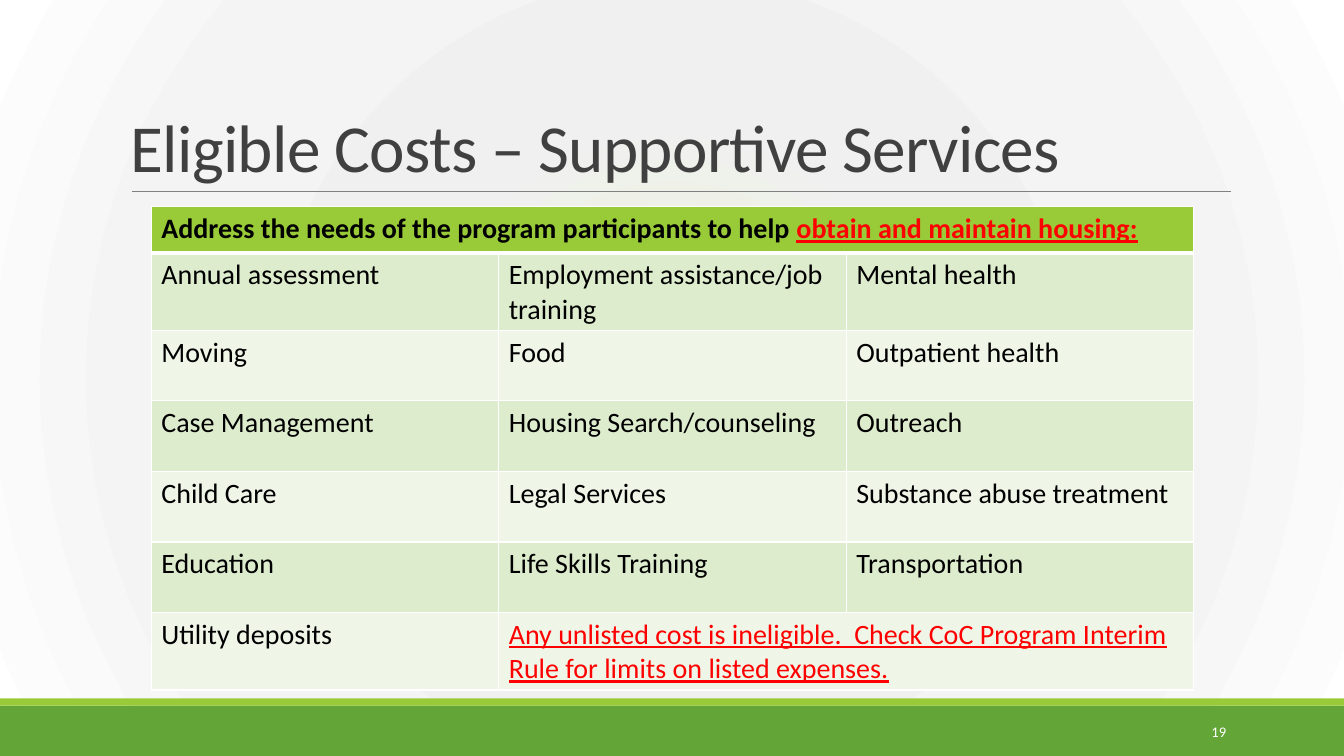
from dataclasses import dataclass

from lxml import etree
from pptx import Presentation
from pptx.dml.color import RGBColor
from pptx.enum.shapes import MSO_CONNECTOR as Line, MSO_SHAPE as Shape
from pptx.enum.text import MSO_ANCHOR as Anchor, PP_ALIGN as Align
from pptx.oxml import parse_xml
from pptx.oxml.ns import nsdecls, qn
from pptx.util import Inches, Pt


@dataclass(frozen=True)
class Theme:
    font: str = "Calibri"
    title_size: float = 48
    body_size: float = 20
    number_size: float = 10.5
    title: str = "404040"
    text: str = "000000"
    alert: str = "FF0000"
    light: str = "FFFFFF"
    rule: str = "808080"
    green: str = "63A537"
    lime: str = "99CB38"
    bands: tuple = ("DEECCE", "EFF6E8")
    backdrop: tuple = ((0, "EBF5D7"), (34, "F0F0F0"), (70, "F4F4F4"), (100, "FFFFFF"))


THEME = Theme()
WIDTH, HEIGHT = 13.33, 7.5
TITLE = "Eligible Costs – Supportive Services"
HEADING = "Address the needs of the program participants to help "
HEADING_ALERT = "obtain and maintain housing:"
SERVICES = [
    ("Annual assessment", "Employment assistance/job training", "Mental health"),
    ("Moving", "Food", "Outpatient health"),
    ("Case Management", "Housing Search/counseling", "Outreach"),
    ("Child Care", "Legal Services", "Substance abuse treatment"),
    ("Education", "Life Skills Training", "Transportation"),
]
LAST_SERVICE = "Utility deposits"
LIMITS = ("Any unlisted cost is ineligible.  Check CoC Program Interim Rule "
          "for limits on listed expenses.")
COLUMNS = 3
HEADER_ROW, FIRST_ROW, ROW = 0.46, 0.74, 0.7


def add_span(para, text, size, color, bold=False, underline=False):
    span = para.add_run()
    span.text = text
    font = span.font
    font.name, font.size, font.bold, font.underline = THEME.font, Pt(size), bold, underline
    font.color.rgb = RGBColor.from_string(color)
    return span


def add_text(page, box, anchor):
    """Add a wrapping text box and return its first paragraph."""
    frame = page.shapes.add_textbox(*map(Inches, box)).text_frame
    frame.word_wrap = True
    frame.vertical_anchor = anchor
    return frame.paragraphs[0]


def add_backdrop(page):
    stops = "".join(f'<a:gs pos="{share * 1000}"><a:srgbClr val="{color}"/></a:gs>'
                    for share, color in THEME.backdrop)
    background = parse_xml(
        f'<p:bg {nsdecls("p", "a")}><p:bgPr><a:gradFill rotWithShape="1">'
        f'<a:gsLst>{stops}</a:gsLst><a:path path="circle">'
        '<a:fillToRect l="100000" t="100000" r="100000" b="100000"/></a:path>'
        '</a:gradFill><a:effectLst/></p:bgPr></p:bg>')
    page.element.find(qn("p:cSld")).insert(0, background)


def add_footer(page, box, number):
    """Fill the box with a band that has a thin stripe above it and a page number."""
    left, top, width, height = box
    stripe = 0.07
    for y, tall, color in ((top, height, THEME.green), (top - stripe, stripe, THEME.lime)):
        band = page.shapes.add_shape(Shape.RECTANGLE, *map(Inches, (left, y, width, tall)))
        band.shadow.inherit = False
        band.fill.solid()
        band.fill.fore_color.rgb = RGBColor.from_string(color)
        band.line.fill.background()
    para = add_text(page, (left + 10.83, top + 0.06, 1.43, 0.4), Anchor.MIDDLE)
    para.alignment = Align.RIGHT
    add_span(para, number, THEME.number_size, THEME.light)


def add_title(page, box):
    left, top, width, height = box
    para = add_text(page, box, Anchor.BOTTOM)
    para.line_spacing = 0.85
    span = add_span(para, TITLE, THEME.title_size, THEME.title)
    span.font._element.set("spc", "-50")
    ends = (left + 0.11, top + height, left + width + 0.01, top + height)
    rule = page.shapes.add_connector(Line.STRAIGHT, *map(Inches, ends))
    rule.line.color.rgb = RGBColor.from_string(THEME.rule)
    rule.line.width = Pt(0.5)
    etree.SubElement(rule._element.spPr, qn("a:effectLst"))


def style_cell(cell, fill, bottom=1):
    """Give the cell a fill and white borders; bottom is that border's width."""
    cell.fill.solid()
    cell.fill.fore_color.rgb = RGBColor.from_string(fill)
    properties = cell._tc.get_or_add_tcPr()
    for place, (side, points) in enumerate(zip("LRTB", (1, 1, 1, bottom))):
        properties.insert(place, parse_xml(
            f'<a:ln{side} {nsdecls("a")} w="{Pt(points)}"><a:solidFill>'
            f'<a:srgbClr val="{THEME.light}"/></a:solidFill></a:ln{side}>'))


def add_services(page, box):
    row_count = len(SERVICES) + 2
    frame = page.shapes.add_table(row_count, COLUMNS, *map(Inches, box))
    table = frame.table
    for column in table.columns:
        column.width = Inches(box[2] / COLUMNS)
    heights = [HEADER_ROW, FIRST_ROW] + [ROW] * (row_count - 2)
    for index, (row, height) in enumerate(zip(table.rows, heights)):
        row.height = Inches(height)
        fill = THEME.bands[(index - 1) % 2] if index else THEME.lime
        for cell in row.cells:
            style_cell(cell, fill, bottom=1 if index else 3)
    last = row_count - 1
    table.cell(0, 0).merge(table.cell(0, COLUMNS - 1))
    table.cell(last, 1).merge(table.cell(last, COLUMNS - 1))

    def write(row, column, text, color=THEME.text, **style):
        para = table.cell(row, column).text_frame.paragraphs[0]
        add_span(para, text, THEME.body_size, color, **style)

    write(0, 0, HEADING, bold=True)
    write(0, 0, HEADING_ALERT, THEME.alert, bold=True, underline=True)
    for row, names in enumerate(SERVICES, 1):
        for column, name in enumerate(names):
            write(row, column, name)
    write(last, 0, LAST_SERVICE)
    write(last, 1, LIMITS, THEME.alert, underline=True)


def main():
    deck = Presentation()
    deck.slide_width, deck.slide_height = Inches(WIDTH), Inches(HEIGHT)
    page = deck.slides.add_slide(deck.slide_layouts[6])
    add_backdrop(page)
    add_footer(page, (0, HEIGHT - 0.5, WIDTH, 0.5), "19")
    add_title(page, (1.2, 0.31, 11, 1.59))
    add_services(page, (1.5, 2.05, 10.34, 4.8))
    deck.save("out.pptx")


if __name__ == "__main__":
    main()
